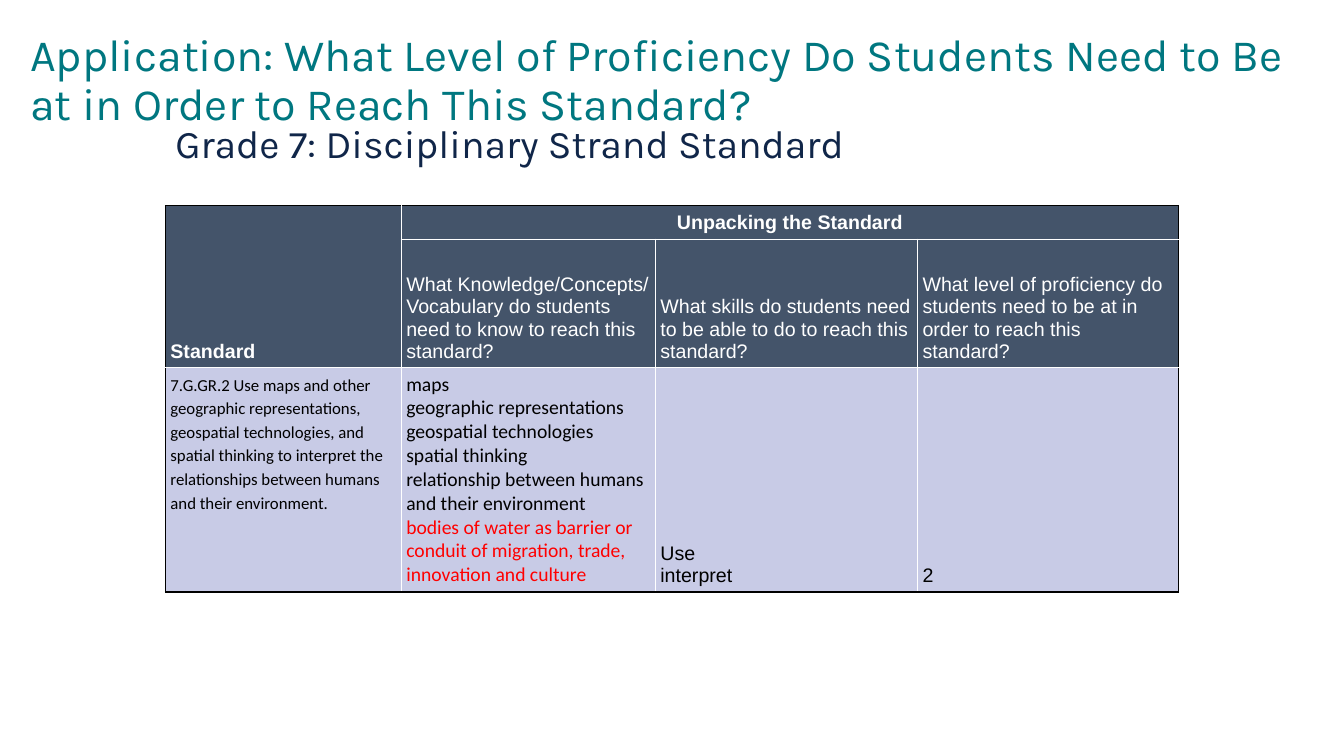
from lxml import etree
from pptx import Presentation
from pptx.dml.color import RGBColor
from pptx.enum.text import MSO_ANCHOR, PP_ALIGN
from pptx.oxml.ns import qn
from pptx.util import Inches, Pt

TOP, MIDDLE, BOTTOM = MSO_ANCHOR.TOP, MSO_ANCHOR.MIDDLE, MSO_ANCHOR.BOTTOM
LEFT, CENTER = PP_ALIGN.LEFT, PP_ALIGN.CENTER

TEAL = RGBColor(0x00, 0x77, 0x80)
NAVY = RGBColor(0x10, 0x26, 0x49)
SLATE = RGBColor(0x44, 0x54, 0x6A)
LAVENDER = RGBColor(0xC8, 0xCB, 0xE6)
WHITE = RGBColor(0xFF, 0xFF, 0xFF)
BLACK = RGBColor(0x00, 0x00, 0x00)
RED = RGBColor(0xFF, 0x00, 0x00)

TITLE = ("Application: What Level of Proficiency Do Students Need to Be at "
         "in Order to Reach This Standard?")
SUBTITLE = "Grade 7: Disciplinary Strand Standard"
STANDARD = ("7.G.GR.2 Use maps and other geographic representations, geospatial "
            "technologies, and spatial thinking to interpret the relationships "
            "between humans and their environment.")
CONCEPTS = ["maps", "geographic representations", "geospatial technologies",
            "spatial thinking", "relationship between humans and their environment"]
EXTRA_CONCEPT = ("bodies of water as barrier or conduit of migration, trade, "
                 "innovation and culture")
QUESTIONS = [
    "What Knowledge/Concepts/ Vocabulary do students need to know to reach this standard?",
    "What skills do students need to be able to do to reach this standard?",
    "What level of proficiency do students need to be at in order to reach this standard?",
]

COLUMN_WIDTHS = [2.34, 2.52, 2.6, 2.59]
ROW_HEIGHTS = [0.33, 1.27, 2.23]
HEADER_ROWS = 2

HEADING = {"name": "Arial", "size": Pt(14), "bold": True, "color": WHITE}
QUESTION = {**HEADING, "bold": False}
ANSWER = {**QUESTION, "color": BLACK}
CONCEPT = {**ANSWER, "name": "Calibri"}
DETAIL = {**CONCEPT, "size": Pt(12)}

# (row, column): (lines of (text, font), anchor, alignment, line spacing)
CELLS = {
    (0, 0): ([("Standard", HEADING)], BOTTOM, LEFT, 1.0),
    (0, 1): ([("Unpacking the Standard", HEADING)], MIDDLE, CENTER, 1.0),
    (2, 0): ([(STANDARD, DETAIL)], TOP, LEFT, 1.15),
    (2, 1): ([(text, CONCEPT) for text in CONCEPTS]
             + [(EXTRA_CONCEPT, {**CONCEPT, "color": RED})], BOTTOM, LEFT, 1.0),
    (2, 2): ([("Use", ANSWER), ("interpret", ANSWER)], BOTTOM, LEFT, 1.0),
    (2, 3): ([("2", ANSWER)], BOTTOM, LEFT, 1.0),
}
for column, question in enumerate(QUESTIONS, start=1):
    CELLS[1, column] = ([(question, QUESTION)], BOTTOM, LEFT, 1.0)


def write(frame, lines, alignment=LEFT, spacing=1.0):
    for index, (text, font) in enumerate(lines):
        para = frame.paragraphs[0] if index == 0 else frame.add_paragraph()
        para.alignment = alignment
        para.line_spacing = spacing
        para.space_before = Pt(0)
        span = para.add_run()
        span.text = text
        for name, value in font.items():
            if name == "color":
                span.font.color.rgb = value
            else:
                setattr(span.font, name, value)


def add_borders(cell, edges):
    properties = cell._tc.get_or_add_tcPr()
    for tag, color in edges.items():
        line = etree.SubElement(properties, qn(tag), w=str(Pt(1)))
        fill = etree.SubElement(line, qn("a:solidFill"))
        etree.SubElement(fill, qn("a:srgbClr"), val=str(color))


def add_standard_table(slide):
    rows, columns = len(ROW_HEIGHTS), len(COLUMN_WIDTHS)
    table = slide.shapes.add_table(
        rows, columns, Inches(1.64), Inches(2.04),
        Inches(sum(COLUMN_WIDTHS)), Inches(sum(ROW_HEIGHTS))).table
    for column, width in zip(table.columns, COLUMN_WIDTHS):
        column.width = Inches(width)
    for row, height in zip(table.rows, ROW_HEIGHTS):
        row.height = Inches(height)
    table.cell(0, 0).merge(table.cell(1, 0))
    table.cell(0, 1).merge(table.cell(0, columns - 1))

    for (row, column), (lines, anchor, alignment, spacing) in CELLS.items():
        cell = table.cell(row, column)
        last_row = row + cell.span_height == rows
        last_column = column + cell.span_width == columns
        add_borders(cell, {
            "a:lnL": BLACK if column == 0 else WHITE,
            "a:lnR": BLACK if last_column else WHITE,
            "a:lnT": BLACK if row == 0 else WHITE,
            "a:lnB": BLACK if last_row else WHITE,
        })
        cell.fill.solid()
        cell.fill.fore_color.rgb = SLATE if row < HEADER_ROWS else LAVENDER
        cell.vertical_anchor = anchor
        for side in ("left", "right", "top", "bottom"):
            setattr(cell, f"margin_{side}", Inches(0.05))
        write(cell.text_frame, lines, alignment, spacing)


def place_heading(box, bounds, text, font):
    box.left, box.top, box.width, box.height = map(Inches, bounds)
    box.text_frame.word_wrap = True
    box.text_frame.vertical_anchor = TOP
    write(box.text_frame, [(text, font)], spacing=0.9)


def main():
    deck = Presentation()
    deck.slide_width, deck.slide_height = Inches(13.33), Inches(7.5)
    slide = deck.slides.add_slide(deck.slide_layouts.get_by_name("Title Only"))
    place_heading(slide.shapes.title, (0.2, 0.28, 12.82, 1.44), TITLE,
                  {"name": "Karla", "size": Pt(32), "color": TEAL})
    place_heading(slide.shapes.add_textbox(0, 0, 0, 0), (1.64, 1.19, 10.05, 5.12),
                  SUBTITLE, {"name": "Karla", "size": Pt(28), "color": NAVY})
    add_standard_table(slide)
    deck.save("out.pptx")


if __name__ == "__main__":
    main()
